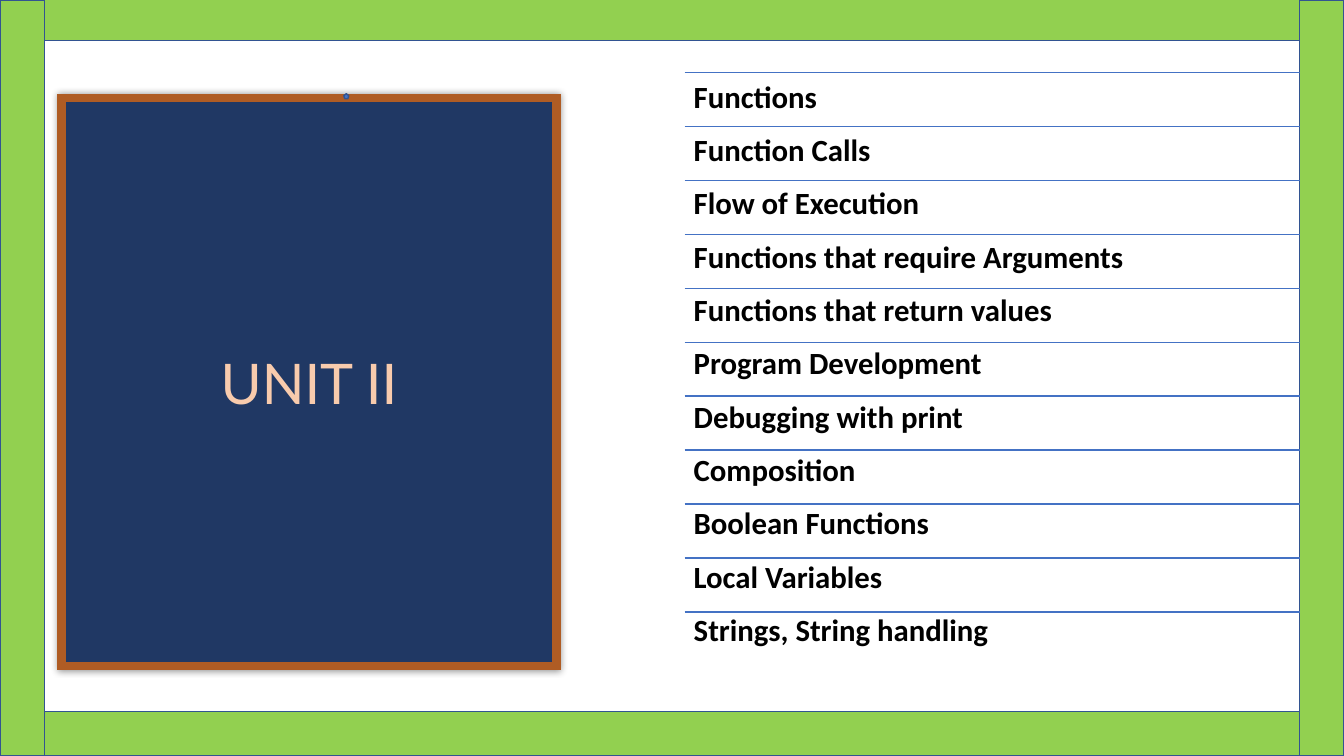
from lxml import etree
from pptx import Presentation
from pptx import util as u
from pptx.dml.color import RGBColor
from pptx.enum import shapes, text
from pptx.oxml import parse_xml
from pptx.oxml.ns import nsdecls, qn

COLOURS = {name: RGBColor.from_string(value) for name, value in {
    "green": "92D050", "edge": "325491", "navy": "203864", "rust": "AF5C24",
    "peach": "F8CBAD", "blue": "4472C4", "black": "000000"}.items()}
TOPICS = ["Functions", "Function Calls", "Flow of Execution",
          "Functions that require Arguments", "Functions that return values",
          "Program Development", "Debugging with print", "Composition",
          "Boolean Functions", "Local Variables", "Strings, String handling"]
WIDTH, HEIGHT = 13.33, 7.5
BAND = 0.44
INNER = WIDTH - 2 * BAND
LIST_LEFT, LIST_TOP, ROW = 6.79, 0.72, 0.535
LIST_RIGHT = WIDTH - BAND


def place(shape, left, top, width, height):
    shape.left, shape.top = u.Inches(left), u.Inches(top)
    shape.width, shape.height = u.Inches(width), u.Inches(height)


def paint(shape, fill, line, points):
    shape.fill.solid()
    shape.fill.fore_color.rgb = COLOURS[fill]
    shape.line.color.rgb = COLOURS[line]
    shape.line.width = u.Pt(points)


deck = Presentation()
deck.slide_width, deck.slide_height = u.Inches(WIDTH), u.Inches(HEIGHT)
slide = deck.slides.add_slide(deck.slide_layouts[1])

# Green frame and the small pentagon
rectangle = shapes.MSO_SHAPE.RECTANGLE
for kind, fill, *box in [
        (rectangle, "green", 0, 0, BAND, HEIGHT),
        (rectangle, "green", LIST_RIGHT, 0, BAND, HEIGHT),
        (rectangle, "green", BAND, -0.04, INNER, BAND),
        (rectangle, "green", BAND, HEIGHT - BAND, INNER, BAND),
        (shapes.MSO_SHAPE.REGULAR_PENTAGON, "blue", 3.41, 0.93, 0.05, 0.05)]:
    part = slide.shapes.add_shape(kind, *map(u.Inches, box))
    part.shadow.inherit = False
    paint(part, fill, "edge", 1)

# Unit title in a diamond with a soft shadow
unit = slide.shapes.title
place(unit, 0.61, 0.97, 4.91, 5.64)
unit_props = unit._element.spPr
unit_props.insert(1, parse_xml(
    f'<a:prstGeom {nsdecls("a")} prst="diamond"><a:avLst/></a:prstGeom>'))
paint(unit, "navy", "rust", 6)
etree.SubElement(unit_props.find(qn("a:ln")), qn("a:miter"), lim="800000")
unit_props.append(parse_xml(
    f'<a:effectLst {nsdecls("a")}><a:outerShdw blurRad="63500" algn="ctr">'
    '<a:srgbClr val="000000"><a:alpha val="40000"/></a:srgbClr>'
    '</a:outerShdw></a:effectLst>'))
unit_frame = unit.text_frame
unit_frame.auto_size = text.MSO_AUTO_SIZE.NONE
unit_frame.vertical_anchor = text.MSO_ANCHOR.MIDDLE
unit_line = unit_frame.paragraphs[0]
unit_line.alignment = text.PP_ALIGN.CENTER
unit_name = unit_line.add_run()
unit_name.text = "UNIT II"
unit_name.font.name, unit_name.font.size = "Lato", u.Pt(40)
unit_name.font.color.rgb = COLOURS["peach"]
unit_name._r.get_or_add_rPr().insert(0, parse_xml(
    f'<a:ln {nsdecls("a")} w="9525"><a:solidFill><a:srgbClr val="ED7D31"/>'
    '</a:solidFill></a:ln>'))

# Topic list, one row per paragraph
topics = slide.placeholders[1]
place(topics, LIST_LEFT, LIST_TOP, LIST_RIGHT - LIST_LEFT, ROW * len(TOPICS))
topics_frame = topics.text_frame
topics_frame.auto_size = text.MSO_AUTO_SIZE.NONE
topics_frame.vertical_anchor = text.MSO_ANCHOR.TOP
topics_frame.margin_left = topics_frame.margin_right = u.Inches(0.09)
topics_frame.margin_top = topics_frame.margin_bottom = u.Inches(0.09)

for row, topic in enumerate(TOPICS):
    item = topics_frame.add_paragraph() if row else topics_frame.paragraphs[0]
    item.line_spacing = 0.9
    item.space_before, item.space_after = u.Pt(0), u.Pt(14.35)
    item_props = item._p.get_or_add_pPr()
    item_props.set("marL", "0")
    item_props.set("indent", "0")
    etree.SubElement(item_props, qn("a:buNone"))
    words = item.add_run()
    words.text = topic
    words.font.name, words.font.size, words.font.bold = "Calibri", u.Pt(22), True
    words.font.color.rgb = COLOURS["black"]

    # Rule above the row
    y = u.Inches(LIST_TOP + row * ROW)
    rule = slide.shapes.add_connector(
        shapes.MSO_CONNECTOR.STRAIGHT, u.Inches(LIST_LEFT), y, u.Inches(LIST_RIGHT), y)
    rule.line.color.rgb = COLOURS["blue"]
    rule.line.width = u.Pt(1)
    etree.SubElement(rule._element.spPr, qn("a:effectLst"))

deck.save("out.pptx")
